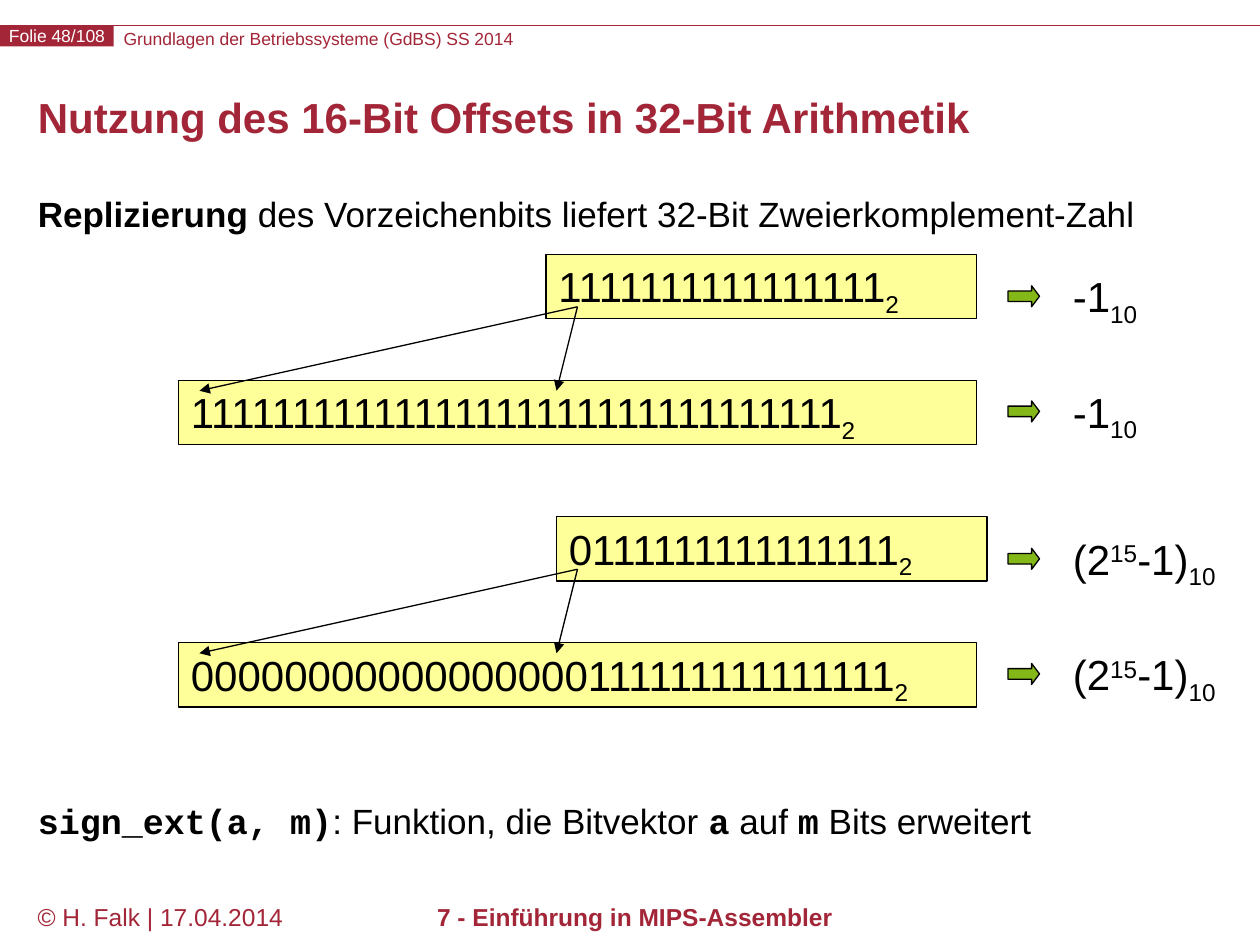
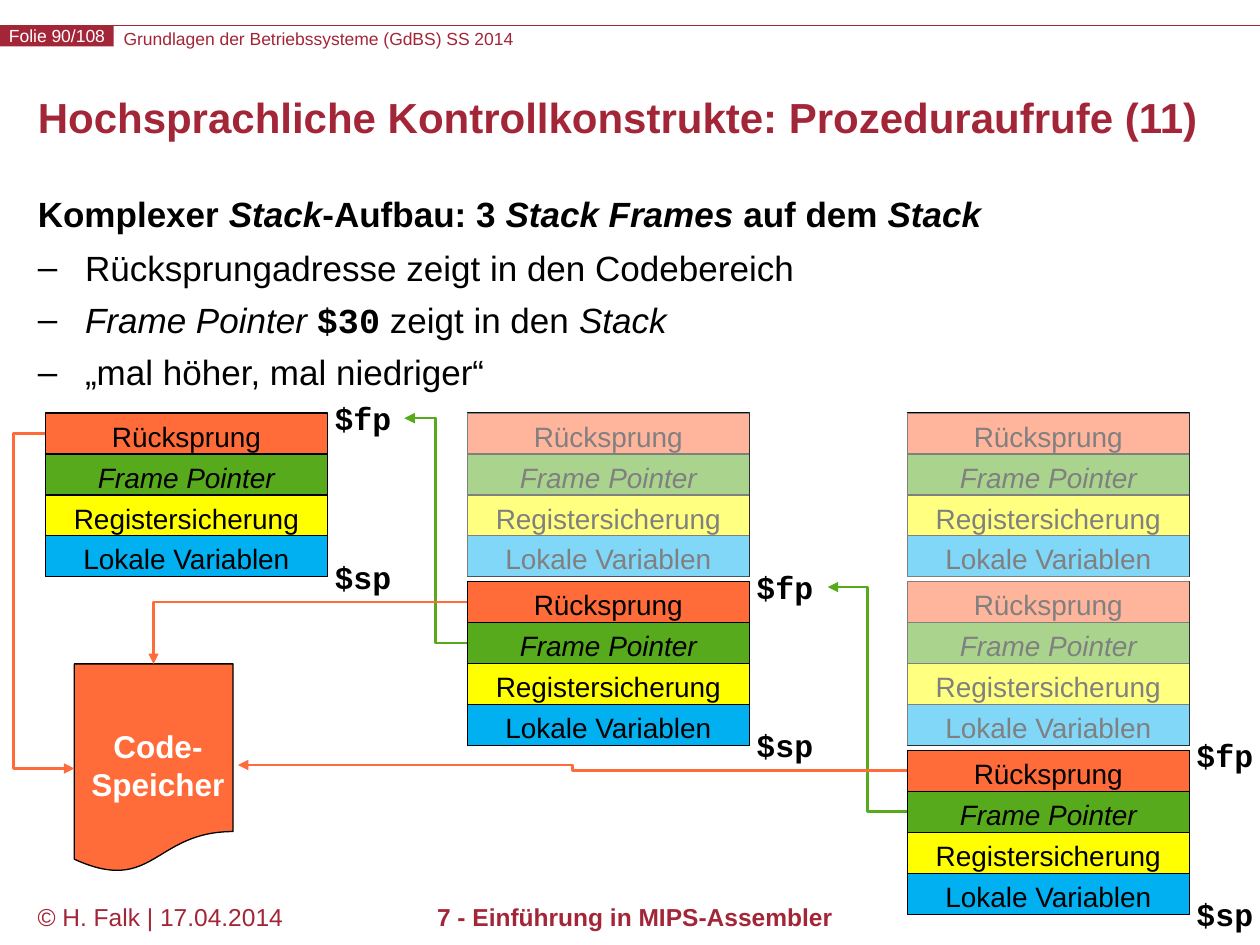
from dataclasses import dataclass
from typing import NamedTuple, Optional

from lxml.etree import SubElement
from pptx import Presentation
from pptx.dml.color import RGBColor
from pptx.enum.shapes import MSO_CONNECTOR as Link, MSO_SHAPE as Preset
from pptx.enum.text import MSO_ANCHOR as Anchor, MSO_AUTO_SIZE as AutoSize, PP_ALIGN as Align
from pptx.oxml.ns import qn
from pptx.util import Pt

RED = RGBColor(0xA3, 0x26, 0x38)
BLACK = RGBColor(0, 0, 0)
WHITE = RGBColor(0xFF, 0xFF, 0xFF)
PALE_YELLOW = RGBColor(0xFF, 0xFF, 0x99)
LIME = RGBColor(0x84, 0xB8, 0x18)
ORANGE = RGBColor(0xFF, 0x6B, 0x39)
GREEN = RGBColor(0x56, 0xAA, 0x1C)
YELLOW = RGBColor(0xFF, 0xFF, 0)
BLUE = RGBColor(0, 0xB0, 0xF0)
SANS, MONO = "Arial", "Courier New"
SLIDE_W, SLIDE_H = 720, 540
INDENT = 27


class Box(NamedTuple):
    left: float
    top: float
    width: float
    height: float


class Run(NamedTuple):
    text: str
    bold: Optional[bool] = None
    italic: Optional[bool] = None
    mono: bool = False
    base: int = 0


@dataclass
class Style:
    size: float
    color: RGBColor = BLACK
    bold: bool = False
    font: str = SANS
    align: Align = Align.LEFT


@dataclass
class Item:
    runs: list[Run]
    spacing: float = 0.9
    before: float = 0
    bullet: str = ""


@dataclass
class SignExtension:
    """A 16-bit word, its 32-bit extension and their common value."""
    top: float
    short_left: float
    short_bits: str
    long_bits: str
    value: list[Run]


class FramePart(NamedTuple):
    run: Run
    color: RGBColor


def code(text: str) -> Run:
    return Run(text, bold=True, mono=True)


def sub(text: str) -> Run:
    return Run(text, base=-25)


def write(p, runs: list[Run], style: Style) -> None:
    p.alignment = style.align
    p.font.size, p.font.name, p.font.bold = Pt(style.size), style.font, style.bold
    p.font.color.rgb = style.color
    for run in runs:
        r = p.add_run()
        r.text = run.text
        r.font.bold, r.font.italic = run.bold, run.italic
        if run.mono:
            r.font.name = MONO
        if run.base:
            r.font._element.set("baseline", str(run.base * 1000))


def fill_frame(tf, lines: list[list[Run]], style: Style, wrap=True, inset=True) -> None:
    tf.word_wrap = wrap
    tf.vertical_anchor = Anchor.TOP
    if not inset:
        tf.margin_left = tf.margin_right = tf.margin_top = tf.margin_bottom = 0
    for i, runs in enumerate(lines):
        write(tf.add_paragraph() if i else tf.paragraphs[0], runs, style)


def add_text(s, box: Box, lines: list[list[Run]], style: Style, wrap=True, inset=True) -> None:
    sp = s.shapes.add_textbox(*map(Pt, box))
    fill_frame(sp.text_frame, lines, style, wrap, inset)


def add_block(s, box: Box, fill: RGBColor, preset=Preset.RECTANGLE, outlined=True):
    sp = s.shapes.add_shape(preset, *map(Pt, box))
    sp.shadow.inherit = False
    sp.fill.solid()
    sp.fill.fore_color.rgb = fill
    if outlined:
        sp.line.color.rgb = BLACK
        sp.line.width = Pt(0.75)
    else:
        sp.line.fill.background()
    return sp


def add_line(s, start, end, color: RGBColor, width=0.75, kind=Link.STRAIGHT, arrow=True):
    c = s.shapes.add_connector(kind, *map(Pt, (*start, *end)))
    c.line.color.rgb = color
    c.line.width = Pt(width)
    props = c._element.spPr
    if arrow:
        SubElement(props.find(qn("a:ln")), qn("a:tailEnd"), type="triangle")
    SubElement(props, qn("a:effectLst"))
    return c


def add_elbow(s, start, end, color: RGBColor, preset="bentConnector3", bend=0.5) -> None:
    c = add_line(s, start, end, color, 1.5, Link.ELBOW)
    geom = c._element.spPr.find(qn("a:prstGeom"))
    geom.set("prst", preset)
    if bend != 0.5:
        guides = geom.find(qn("a:avLst"))
        if guides is None:
            guides = SubElement(geom, qn("a:avLst"))
        SubElement(guides, qn("a:gd"), name="adj1", fmla=f"val {round(bend * 100000)}")


def place(sp, box: Box) -> None:
    sp.left, sp.top, sp.width, sp.height = map(Pt, box)
    sp.text_frame.auto_size = AutoSize.NONE


def add_item(p, item: Item) -> None:
    write(p, item.runs, Style(20))
    p.line_spacing = item.spacing
    p.space_before = Pt(item.before)
    props = p._p.get_or_add_pPr()
    props.set("marL", str(Pt(INDENT)))
    props.set("indent", str(-Pt(INDENT)))
    if item.bullet:
        mark = props.makeelement(qn("a:buChar"), {"char": item.bullet})
    else:
        mark = props.makeelement(qn("a:buNone"), {})
    props.find(qn("a:defRPr")).addprevious(mark)


def new_slide(prs, number: int, title: str, items: list[Item]):
    """Add a slide with header band, title, list and footer."""
    s = prs.slides.add_slide(prs.slide_layouts[1])
    head, body = s.shapes.title, s.placeholders[1]
    place(head, Box(14.4, 43.2, 692, 51.8))
    fill_frame(head.text_frame, [[Run(title)]], Style(24, RED, bold=True))
    head.text_frame.vertical_anchor = Anchor.MIDDLE
    head.text_frame.paragraphs[0].line_spacing = Pt(24)

    place(body, Box(14.4, 109.4, 692, 393))
    tf = body.text_frame
    for i, item in enumerate(items):
        add_item(tf.add_paragraph() if i else tf.paragraphs[0], item)

    add_line(s, (0, 14.4), (SLIDE_W, 14.4), RED, arrow=False)
    add_text(s, Box(70.6, 15.8, 475, 12.2),
             [[Run("Grundlagen der Betriebssysteme (GdBS) SS 2014")]],
             Style(10, RED), inset=False)
    folio = add_block(s, Box(0, 14.4, 65, 12.2), RED, outlined=False)
    fill_frame(folio.text_frame, [[Run(f"Folie {number}/108")]],
               Style(10, WHITE, align=Align.CENTER), wrap=False, inset=False)
    add_text(s, Box(14.4, 512, 158.4, 28), [[Run("© H. Falk | 17.04.2014")]], Style(14, RED))
    add_text(s, Box(144.7, 512, 436.3, 28), [[Run("7 - Einführung in MIPS-Assembler")]],
             Style(14, RED, bold=True, align=Align.CENTER))
    return s


def draw_extension(s, ext: SignExtension) -> None:
    style = Style(24)
    words = (
        (Box(ext.short_left, ext.top, 246, 36.7), ext.short_bits),
        (Box(102, ext.top + 72, 456, 36.7), ext.long_bits),
    )
    for box, bits in words:
        word = add_block(s, box, PALE_YELLOW)
        fill_frame(word.text_frame, [[Run(bits), sub("2")]], style)
    for value_dy, arrow_dy in ((6, 18), (72, 83.8)):
        add_text(s, Box(606, ext.top + value_dy, 102, 36), [ext.value], style)
        arrow = add_block(s, Box(576, ext.top + arrow_dy, 18, 12), LIME, Preset.RIGHT_ARROW)
        arrow.adjustments[1] = 0.375
    for target_x in (114, 318):
        add_line(s, (330, ext.top + 30), (target_x, ext.top + 78), BLACK)


def build_sign_extension(prs) -> None:
    s = new_slide(prs, 48, "Nutzung des 16-Bit Offsets in 32-Bit Arithmetik", [
        Item([Run("Replizierung", bold=True),
              Run(" des Vorzeichenbits liefert 32-Bit Zweierkomplement-Zahl")]),
        Item([code("sign_ext(a, m)"), Run(": Funktion, die Bitvektor "), code("a"),
              Run(" auf "), code("m"), Run(" Bits erweitert")], before=325),
    ])
    power = [Run("(2"), Run("15", base=30), Run("-1)"), sub("10")]
    draw_extension(s, SignExtension(145.3, 312, "1" * 16, "1" * 32, [Run("-1"), sub("10")]))
    draw_extension(s, SignExtension(295.3, 318, "0" + "1" * 15, "0" * 17 + "1" * 15, power))


FRAME_PARTS = (
    FramePart(Run("Rücksprung"), ORANGE),
    FramePart(Run("Frame Pointer", italic=True), GREEN),
    FramePart(Run("Registersicherung"), YELLOW),
    FramePart(Run("Lokale Variablen"), BLUE),
)
STACK_LEFTS = (25.9, 267, 518.4)
STACK_TOP, FRAME_W, PART_H, FRAME_PITCH = 236, 161.3, 23.4, 96.4
FRAME_H = PART_H * len(FRAME_PARTS)


def frame_top(depth: int) -> float:
    return STACK_TOP + depth * FRAME_PITCH


def part_entry(depth: int, part: int) -> tuple[float, float]:
    """Middle of the left edge of a part in the newest frame of a stack."""
    return STACK_LEFTS[depth], frame_top(depth) + (part + 0.5) * PART_H


def draw_stack(s, depth: int) -> None:
    """Draw a stack whose frames above the newest one are faded."""
    left = STACK_LEFTS[depth]
    for level in range(depth + 1):
        for i, part in enumerate(FRAME_PARTS):
            box = Box(left, frame_top(level) + i * PART_H, FRAME_W, PART_H)
            sp = add_block(s, box, part.color)
            fill_frame(sp.text_frame, [[part.run]], Style(16, align=Align.CENTER), wrap=False)
    if depth:
        height = (depth - 1) * FRAME_PITCH + FRAME_H
        veil = add_block(s, Box(left, STACK_TOP, FRAME_W, height), WHITE, outlined=False)
        color = veil._element.spPr.find(qn("a:solidFill"))[0]
        SubElement(color, qn("a:alpha"), val="50000")
    for name, dy in (("$fp", -11.6), ("$sp", 79.2)):
        add_text(s, Box(left + 158.2, frame_top(depth) + dy, 46.8, 28.8), [[Run(name)]],
                 Style(18, bold=True, font=MONO), wrap=False)


def build_stack_frames(prs) -> None:
    s = new_slide(prs, 90, "Hochsprachliche Kontrollkonstrukte: Prozeduraufrufe (11)", [
        Item([Run("Komplexer ", True), Run("Stack", True, True), Run("-Aufbau: 3 ", True),
              Run("Stack Frames", True, True), Run(" auf dem ", True),
              Run("Stack", True, True)]),
        *(Item(runs, spacing=1.2, before=1.2, bullet="–") for runs in (
            [Run("Rücksprungadresse zeigt in den Codebereich")],
            [Run("Frame Pointer ", italic=True), code("$30"), Run(" zeigt in den "),
             Run("Stack", italic=True)],
            [Run("„mal höher, mal niedriger“")],
        )),
    ])
    for depth in range(len(STACK_LEFTS)):
        draw_stack(s, depth)

    add_elbow(s, part_entry(1, 1), (231.1, 239), GREEN)
    add_elbow(s, part_entry(2, 1), (473, 335.5), GREEN)

    add_block(s, Box(42.5, 379.4, 90.7, 119.5), ORANGE, Preset.FLOWCHART_DOCUMENT)
    add_text(s, Box(44.6, 411.8, 91.4, 51.1), [[Run("Code-")], [Run("Speicher")]],
             Style(18, WHITE, bold=True, align=Align.CENTER), wrap=False)
    add_elbow(s, part_entry(0, 0), (42.5, 439.2), ORANGE, bend=-1.1)
    add_elbow(s, part_entry(1, 0), (87.8, 379.4), ORANGE, "bentConnector2")
    add_elbow(s, part_entry(2, 0), (136, 437.2), ORANGE)


def main() -> None:
    prs = Presentation()
    prs.slide_width, prs.slide_height = Pt(SLIDE_W), Pt(SLIDE_H)
    build_sign_extension(prs)
    build_stack_frames(prs)
    prs.save("out.pptx")


if __name__ == "__main__":
    main()
